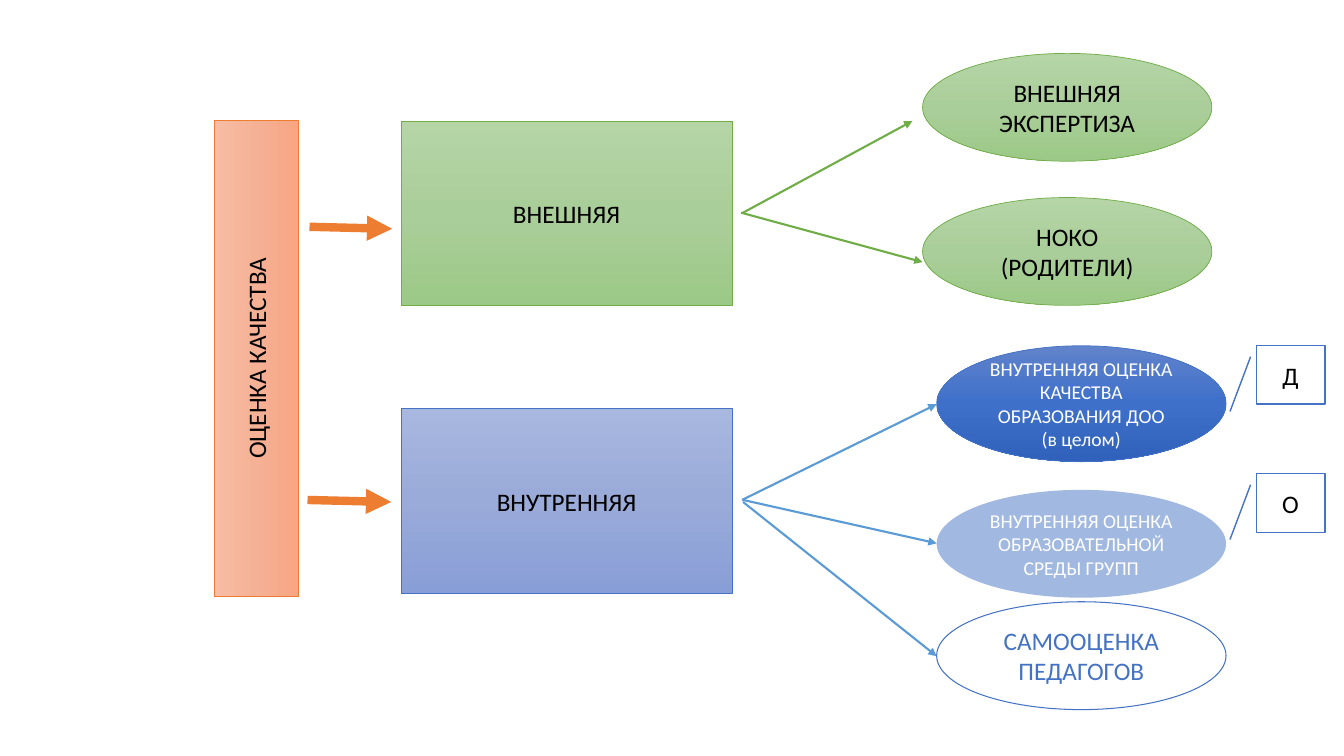
"""Build a slide showing the external and internal branches of quality assessment."""
from copy import deepcopy
from dataclasses import dataclass, field

from lxml.etree import SubElement
from pptx import Presentation
from pptx.dml.color import RGBColor
from pptx.enum.shapes import MSO_CONNECTOR, MSO_SHAPE as Shape
from pptx.enum.text import MSO_ANCHOR, PP_ALIGN
from pptx.oxml.ns import qn
from pptx.util import Inches, Pt


@dataclass(frozen=True)
class Theme:
    """Colours, type sizes and line weights of the slide."""
    font: str = "Calibri"
    large: int = 18
    small: int = 14
    orange: str = "ED7D31"
    green: str = "70AD47"
    blue: str = "4472C4"
    sky: str = "5B9BD5"
    black: str = "000000"
    white: str = "FFFFFF"
    styles: dict = field(default_factory=dict)


theme = Theme()
theme.styles.update({
    "orange": {"fill": ("F7BDA5", "F5B196", "F8A582"), "line": (theme.orange, 0.5)},
    "green": {"fill": ("B5D5A7", "AACE9A", "9CC987"), "line": (theme.green, 0.5)},
    "lilac": {"fill": ("A8B7DF", "9AABD9", "889ED7"), "line": (theme.blue, 0.5)},
    "blue": {"fill": ("6183CB", "3E70CA", "3062BB"), "line": (theme.blue, 0.5),
             "text": theme.white, "size": theme.small},
    "pale": {"fill": (theme.blue,), "alpha": 50, "text": theme.white, "size": theme.small},
    "outline": {"line": (theme.blue, 0.75), "text": theme.blue},
    "callout": {"fill": (theme.white,), "line": (theme.blue, 1)},
})

ROOT = ("ОЦЕНКА КАЧЕСТВА", "orange", (0.18, 3.14, 4.72, 0.83))
BRANCHES = [
    ("ВНЕШНЯЯ", "green", (3.98, 1.2, 3.28, 1.83)),
    ("ВНУТРЕННЯЯ", "lilac", (3.98, 4.05, 3.28, 1.84)),
]
OUTER_X, INNER_X, OVAL_WIDTH = 9.15, 9.29, 2.87
OVALS = [
    ("ВНЕШНЯЯ ЭКСПЕРТИЗА", "green", OUTER_X, 0.53, 1.07),
    ("НОКО (РОДИТЕЛИ)", "green", OUTER_X, 1.96, 1.07),
    ("ВНУТРЕННЯЯ ОЦЕНКА КАЧЕСТВА ОБРАЗОВАНИЯ ДОО (в целом)", "blue", INNER_X, 3.43, 1.15),
    ("ВНУТРЕННЯЯ ОЦЕНКА ОБРАЗОВАТЕЛЬНОЙ СРЕДЫ ГРУПП", "pale", INNER_X, 4.86, 1.07),
    ("САМООЦЕНКА ПЕДАГОГОВ", "outline", INNER_X, 5.97, 1.07),
]
CALLOUTS = [("Д", 3.43), ("О", 4.7)]
ARROWS = [
    (theme.orange, 6, [(3.07, 2.25, 3.89, 2.27), (3.05, 4.96, 3.88, 4.98)]),
    (theme.green, 1.5, [(7.37, 2.11, 9.05, 1.2), (7.35, 2.11, OUTER_X, 2.6)]),
    (theme.sky, 1.5, [(7.36, 4.96, INNER_X, 4.01), (7.37, 4.96, INNER_X, 5.39),
                      (7.37, 4.98, INNER_X, 6.51)]),
]


def paint(box, colours, alpha):
    """Fill a shape with nothing, one colour or a vertical gradient."""
    fill = box.fill
    if not colours:
        fill.background()
    elif len(colours) == 1:
        fill.solid()
        fill.fore_color.rgb = RGBColor.from_string(colours[0])
        if alpha:
            colour = box.element.spPr.find(qn("a:solidFill"))[0]
            SubElement(colour, qn("a:alpha"), val=str(alpha * 1000))
    else:
        fill.gradient()
        fill.gradient_angle = 270
        stops = box.element.spPr.find(qn("a:gradFill")).find(qn("a:gsLst"))
        stops.insert(1, deepcopy(stops[0]))
        for index, (stop, colour) in enumerate(zip(fill.gradient_stops, colours)):
            stop.position = index / 2
            stop.color.rgb = RGBColor.from_string(colour)


def add_box(page, kind, text, style_name, place):
    """Add a preset shape with centred text in a named style."""
    style = theme.styles[style_name]
    box = page.shapes.add_shape(kind, *map(Inches, place))
    box.shadow.inherit = False
    paint(box, style.get("fill"), style.get("alpha"))
    if "line" in style:
        colour, weight = style["line"]
        box.line.color.rgb = RGBColor.from_string(colour)
        box.line.width = Pt(weight)
    else:
        box.line.fill.background()
    frame = box.text_frame
    for name, value in {"word_wrap": True, "vertical_anchor": MSO_ANCHOR.MIDDLE}.items():
        setattr(frame, name, value)
    para = frame.paragraphs[0]
    para.alignment = PP_ALIGN.CENTER
    span = para.add_run()
    span.text = text
    font_format = {"name": theme.font, "size": Pt(style.get("size", theme.large))}
    for name, value in font_format.items():
        setattr(span.font, name, value)
    span.font.color.rgb = RGBColor.from_string(style.get("text", theme.black))
    return box


def add_arrow(page, colour, weight, ends):
    """Add a straight arrow between two points."""
    arrow = page.shapes.add_connector(MSO_CONNECTOR.STRAIGHT, *map(Inches, ends))
    arrow.line.color.rgb = RGBColor.from_string(colour)
    arrow.line.width = Pt(weight)
    SubElement(arrow.line._get_or_add_ln(), qn("a:tailEnd"), type="triangle")
    SubElement(arrow.element.spPr, qn("a:effectLst"))


def main():
    """Lay out the slide and save it."""
    deck = Presentation()
    deck.slide_width, deck.slide_height = Inches(13.33), Inches(7.5)
    page = deck.slides.add_slide(deck.slide_layouts[6])
    add_box(page, Shape.RECTANGLE, *ROOT).rotation = 270
    for branch in BRANCHES:
        add_box(page, Shape.RECTANGLE, *branch)
    for text, style, left, top, height in OVALS:
        add_box(page, Shape.OVAL, text, style, (left, top, OVAL_WIDTH, height))
    for colour, weight, group in ARROWS:
        for ends in group:
            add_arrow(page, colour, weight, ends)
    for text, top in CALLOUTS:
        add_box(page, Shape.LINE_CALLOUT_1, text, "callout", (12.46, top, 0.68, 0.58))
    deck.save("out.pptx")


if __name__ == "__main__":
    main()
